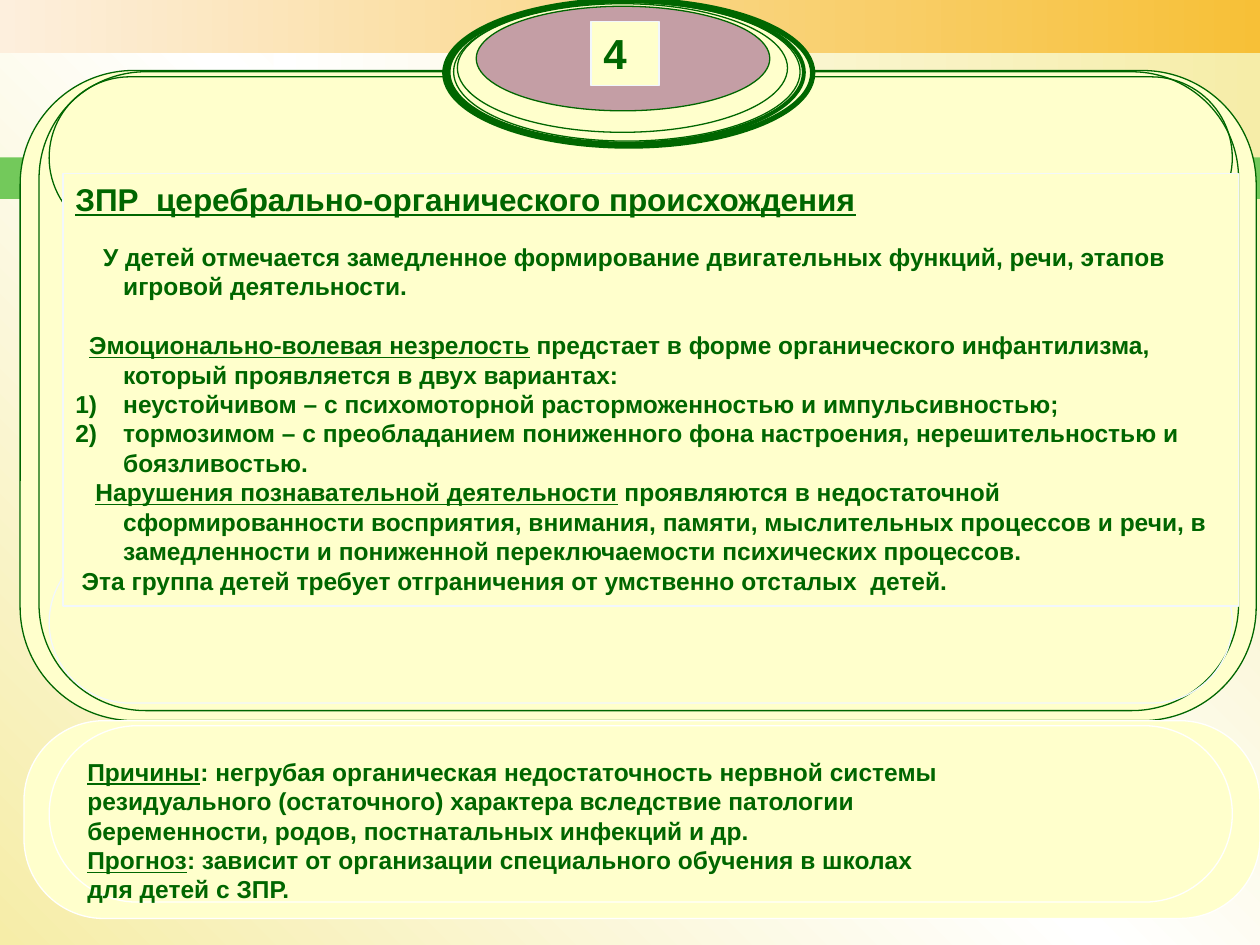
from dataclasses import dataclass
from typing import Optional

from lxml import etree
from pptx import Presentation
from pptx.dml.color import RGBColor
from pptx.enum.shapes import MSO_SHAPE
from pptx.enum.text import MSO_ANCHOR, PP_ALIGN
from pptx.oxml.ns import qn
from pptx.util import Inches, Pt

RECTANGLE = MSO_SHAPE.RECTANGLE
ROUNDED = MSO_SHAPE.ROUNDED_RECTANGLE
OVAL = MSO_SHAPE.OVAL
LEFT = PP_ALIGN.LEFT
TOP = MSO_ANCHOR.TOP
MIDDLE = MSO_ANCHOR.MIDDLE

COLORS = {
    "green": "006600",
    "cream": "FFFFCC",
    "white": "FFFFFF",
    "pale": "F2F7FC",
    "purple": "660066",
    "sand": "F6EDA8",
    "peach": "FDEFDD",
    "gold": "F7C037",
    "leaf": "73C95B",
}
FONT = "Arial"
HANGING = 0.38


@dataclass(frozen=True)
class Panel:
    kind: MSO_SHAPE
    left: float
    top: float
    width: float
    height: float
    fill: Optional[str] = None
    line: Optional[str] = None
    weight: float = 0.75
    corner: Optional[float] = None
    opacity: Optional[int] = None
    gradient: tuple = ()


@dataclass(frozen=True)
class TextRun:
    text: str
    underline: bool = False


@dataclass(frozen=True)
class TextLine:
    runs: tuple[TextRun, ...]
    size: float = 14
    margin: float = 0
    first: float = 0
    before: float = 0
    numbered: bool = False


BANDS = [
    Panel(RECTANGLE, 0, 0, 10, 0.42, gradient=("peach", "gold")),
    Panel(RECTANGLE, 2.17, 0.42, 7.83, 0.83, gradient=("white", "sand")),
    Panel(RECTANGLE, 0, 1.25, 10, 0.33, "leaf"),
]
FRAMES = [
    Panel(ROUNDED, 0.16, 0.56, 9.81, 5.16, "cream", "green", corner=0.175),
    Panel(ROUNDED, 0.31, 0.57, 9.52, 5.07, "cream", "green", corner=0.167),
    Panel(ROUNDED, 0.39, 4.3, 9.39, 1.28, None, "pale", corner=0.5),
    Panel(ROUNDED, 0.39, 0.61, 9.39, 1.28, None, "green", corner=0.5),
    Panel(ROUNDED, 0.19, 5.72, 9.81, 1.57, "cream", "white", corner=0.404),
]
CAUSES = Panel(ROUNDED, 0.39, 5.76, 9.39, 1.4, "cream", "white", corner=0.5)
MEDALLION = [
    Panel(OVAL, 3.53, 0, 2.92, 1.16, "cream", "green", 3),
    Panel(OVAL, 3.56, 0.01, 2.82, 1.13, "cream", "green", 2.25),
    Panel(OVAL, 3.6, 0.02, 2.75, 1.1, None, "green"),
    Panel(OVAL, 3.63, 0.03, 2.62, 1.02, "cream", "green", opacity=48),
    Panel(OVAL, 3.78, 0.05, 2.33, 0.83, "purple", "green", opacity=38),
]
NUMBER = Panel(RECTANGLE, 4.69, 0.17, 0.54, 0.51, "cream", "pale")
DESCRIPTION = Panel(RECTANGLE, 0.5, 1.38, 9.33, 3.43, "cream", "pale")

CAUSES_TEXT = [
    TextLine((TextRun("Причины", True),
              TextRun(": негрубая органическая недостаточность нервной системы"))),
    TextLine((TextRun("резидуального (остаточного) характера вследствие патологии"),)),
    TextLine((TextRun("беременности, родов, постнатальных инфекций и др."),)),
    TextLine((TextRun("Прогноз", True),
              TextRun(": зависит от организации специального обучения в школах"))),
    TextLine((TextRun("для детей с ЗПР."),)),
]
DESCRIPTION_TEXT = [
    TextLine((TextRun("ЗПР  церебрально-органического происхождения", True),),
             18, HANGING),
    TextLine((TextRun("У детей отмечается замедленное формирование двигательных функций, "
                      "речи, этапов игровой деятельности."),),
             margin=HANGING, first=0.22, before=13.8),
    TextLine((TextRun("Эмоционально-волевая незрелость", True),
              TextRun(" предстает в форме органического инфантилизма, "
                      "который проявляется в двух вариантах:")),
             margin=HANGING, first=0.11, before=16.8),
    TextLine((TextRun("неустойчивом – с психомоторной расторможенностью и импульсивностью;"),),
             margin=HANGING, numbered=True),
    TextLine((TextRun("тормозимом – с преобладанием пониженного фона настроения, "
                      "нерешительностью и боязливостью."),),
             margin=HANGING, numbered=True),
    TextLine((TextRun("Нарушения познавательной деятельности", True),
              TextRun(" проявляются в недостаточной сформированности восприятия, внимания, "
                      "памяти, мыслительных процессов и речи, в замедленности и пониженной "
                      "переключаемости психических процессов.")),
             margin=HANGING, first=0.16),
    TextLine((TextRun("Эта группа детей требует отграничения от умственно отсталых  детей."),),
             margin=HANGING, first=0.05),
]


def color(name: str) -> RGBColor:
    return RGBColor.from_string(COLORS[name])


def apply_gradient(fill, element, names: tuple, angle: float = 0) -> None:
    fill.gradient()
    fill.gradient_angle = (360 - angle) % 360
    stops = element.find(".//" + qn("a:gsLst"))
    for stop in list(stops):
        stops.remove(stop)
    for index, name in enumerate(names):
        position = 100000 * index // (len(names) - 1)
        stop = etree.SubElement(stops, qn("a:gs"), pos=str(position))
        etree.SubElement(stop, qn("a:srgbClr"), val=COLORS[name])


def draw_panel(slide, panel: Panel):
    shape = slide.shapes.add_shape(panel.kind, Inches(panel.left), Inches(panel.top),
                                   Inches(panel.width), Inches(panel.height))
    shape.shadow.inherit = False
    if panel.corner is not None:
        shape.adjustments[0] = panel.corner
    if panel.gradient:
        apply_gradient(shape.fill, shape.element, panel.gradient)
    elif panel.fill:
        shape.fill.solid()
        shape.fill.fore_color.rgb = color(panel.fill)
    else:
        shape.fill.background()
    if panel.opacity is not None:
        fill_color = shape.element.spPr.find(qn("a:solidFill"))[0]
        etree.SubElement(fill_color, qn("a:alpha"), val=str(panel.opacity * 1000))
    if panel.line:
        shape.line.color.rgb = color(panel.line)
        shape.line.width = Pt(panel.weight)
    else:
        shape.line.fill.background()
    return shape


def write_text(shape, lines: list[TextLine], anchor: MSO_ANCHOR) -> None:
    frame = shape.text_frame
    frame.word_wrap = True
    frame.vertical_anchor = anchor
    for index, line in enumerate(lines):
        paragraph = frame.add_paragraph() if index else frame.paragraphs[0]
        paragraph.alignment = LEFT
        properties = paragraph._p.get_or_add_pPr()
        properties.set("marL", str(Inches(line.margin)))
        properties.set("indent", str(Inches(line.first - line.margin)))
        if line.before:
            paragraph.space_before = Pt(line.before)
        if line.numbered:
            etree.SubElement(properties, qn("a:buFont"), typeface=FONT)
            etree.SubElement(properties, qn("a:buAutoNum"), type="arabicParenR")
        for piece in line.runs:
            run = paragraph.add_run()
            run.text = piece.text
            run.font.name = FONT
            run.font.size = Pt(line.size)
            run.font.bold = True
            run.font.underline = piece.underline
            run.font.color.rgb = color("green")


def main() -> None:
    presentation = Presentation()
    presentation.slide_width = Inches(10)
    presentation.slide_height = Inches(7.5)
    slide = presentation.slides.add_slide(presentation.slide_layouts[6])
    apply_gradient(slide.background.fill, slide.element, ("sand", "white", "sand"), 315)
    for panel in BANDS + FRAMES:
        draw_panel(slide, panel)
    causes = draw_panel(slide, CAUSES)
    causes.text_frame.margin_top = Inches(0.31)
    write_text(causes, CAUSES_TEXT, MIDDLE)
    for panel in MEDALLION:
        draw_panel(slide, panel)
    write_text(draw_panel(slide, NUMBER), [TextLine((TextRun("4"),), 24)], TOP)
    write_text(draw_panel(slide, DESCRIPTION), DESCRIPTION_TEXT, TOP)
    presentation.save("out.pptx")


if __name__ == "__main__":
    main()
